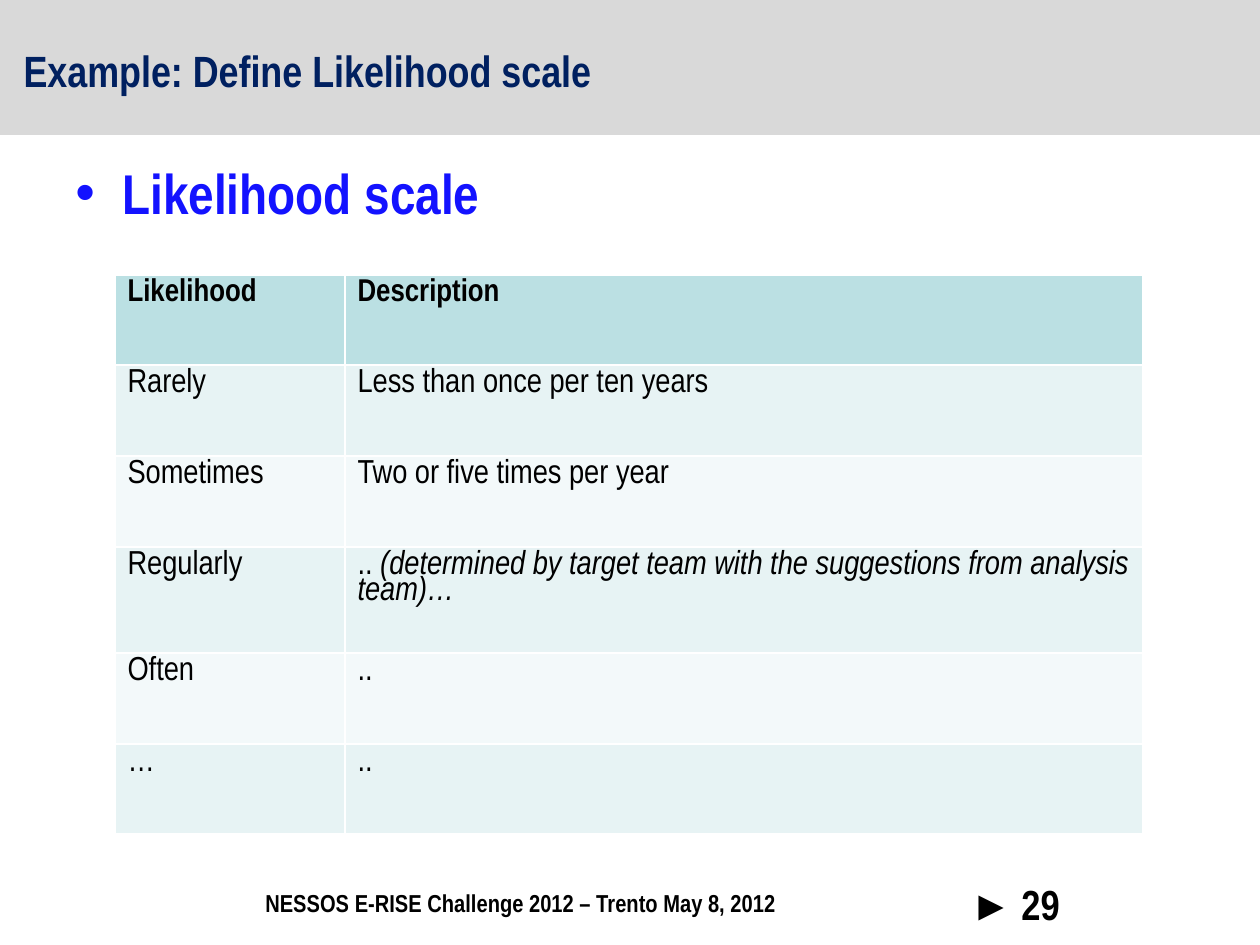
"""Build the likelihood scale slide with its heading, table and footer."""
from dataclasses import dataclass

from lxml import etree
from pptx import Presentation
from pptx.dml.color import RGBColor
from pptx.enum import text
from pptx.oxml import ns
from pptx.util import Pt


@dataclass(frozen=True)
class Theme:
    face: str = "Arial Narrow"
    band: str = "D9D9D9"
    navy: str = "002060"
    blue: str = "1312FF"
    black: str = "000000"
    header: str = "BBE0E3"
    odd: str = "E7F3F4"
    even: str = "F3F9FA"
    title_size: int = 25
    heading_size: int = 32
    header_size: int = 18
    cell_size: int = 19
    footer_size: int = 14
    number_size: int = 24


theme = Theme()


def px(count):
    return round(count * 914400 / 126)


def write(paragraph, words, size, color, bold=False, italic=False):
    run = paragraph.add_run()
    run.text = words
    formats = {"name": theme.face, "size": Pt(size), "bold": bold, "italic": italic}
    for name, value in formats.items():
        setattr(run.font, name, value)
    run.font.color.rgb = RGBColor.from_string(color)


deck = Presentation()
deck.slide_width, deck.slide_height = px(1260), px(945)
slide = deck.slides.add_slide(deck.slide_layouts[5])

title = slide.shapes.title
band = slide.shapes.add_shape(1, 0, 0, px(1260), px(135))
band.shadow.inherit = False
band.fill.solid()
band.fill.fore_color.rgb = RGBColor.from_string(theme.band)
band.line.fill.background()
title._element.addprevious(band._element)

place = {"left": px(11), "top": px(26), "width": px(1134), "height": px(87)}
for name, value in place.items():
    setattr(title, name, value)
title.text_frame.vertical_anchor = text.MSO_ANCHOR.MIDDLE
title_line = title.text_frame.paragraphs[0]
title_line.alignment = text.PP_ALIGN.LEFT
write(title_line, "Example: Define Likelihood scale", theme.title_size, theme.navy, True)

labels = [
    ("Likelihood scale", (63, 152, 1134, 90), theme.heading_size, theme.blue, True),
    ("NESSOS E-RISE Challenge 2012 – Trento May 8, 2012", (253, 882, 615, 43),
     theme.footer_size, theme.black, False),
    ("► 29", (958, 872, 262, 72), theme.number_size, theme.black, False),
]
for words, bounds, size, color, bulleted in labels:
    label = slide.shapes.add_textbox(*map(px, bounds))
    label.text_frame.word_wrap = True
    line = label.text_frame.paragraphs[0]
    if bulleted:
        properties = line._p.get_or_add_pPr()
        properties.set("marL", str(px(47)))
        properties.set("indent", str(px(-47)))
        etree.SubElement(properties, ns.qn("a:buFont")).set("typeface", "Arial")
        etree.SubElement(properties, ns.qn("a:buChar")).set("char", "•")
    write(line, words, size, color, True)

scale_rows = [
    ("Likelihood", "Description", ""),
    ("Rarely", "Less than once per ten years", ""),
    ("Sometimes", "Two or five times per year", ""),
    ("Regularly", "..", " (determined by target team with the suggestions from analysis team)…"),
    ("Often", "..", ""),
    ("…", "..", ""),
]
column_widths = [230, 798]
row_heights = [90, 91, 91, 106, 91, 90]
scale = slide.shapes.add_table(
    len(scale_rows), len(column_widths), px(115), px(275),
    px(sum(column_widths)), px(sum(row_heights))).table
for column, width in zip(scale.columns, column_widths):
    column.width = px(width)

for index, (level, description, remark) in enumerate(scale_rows):
    scale.rows[index].height = px(row_heights[index])
    heading = index == 0
    fill = theme.header if heading else theme.odd if index % 2 else theme.even
    size = theme.header_size if heading else theme.cell_size
    for cell, words in zip(scale.rows[index].cells, (level, description)):
        cell.fill.solid()
        cell.fill.fore_color.rgb = RGBColor.from_string(fill)
        entry = cell.text_frame.paragraphs[0]
        entry.line_spacing = 0.85
        write(entry, words, size, theme.black, heading)
    if remark:
        write(entry, remark, size, theme.black, italic=True)

deck.save("out.pptx")
